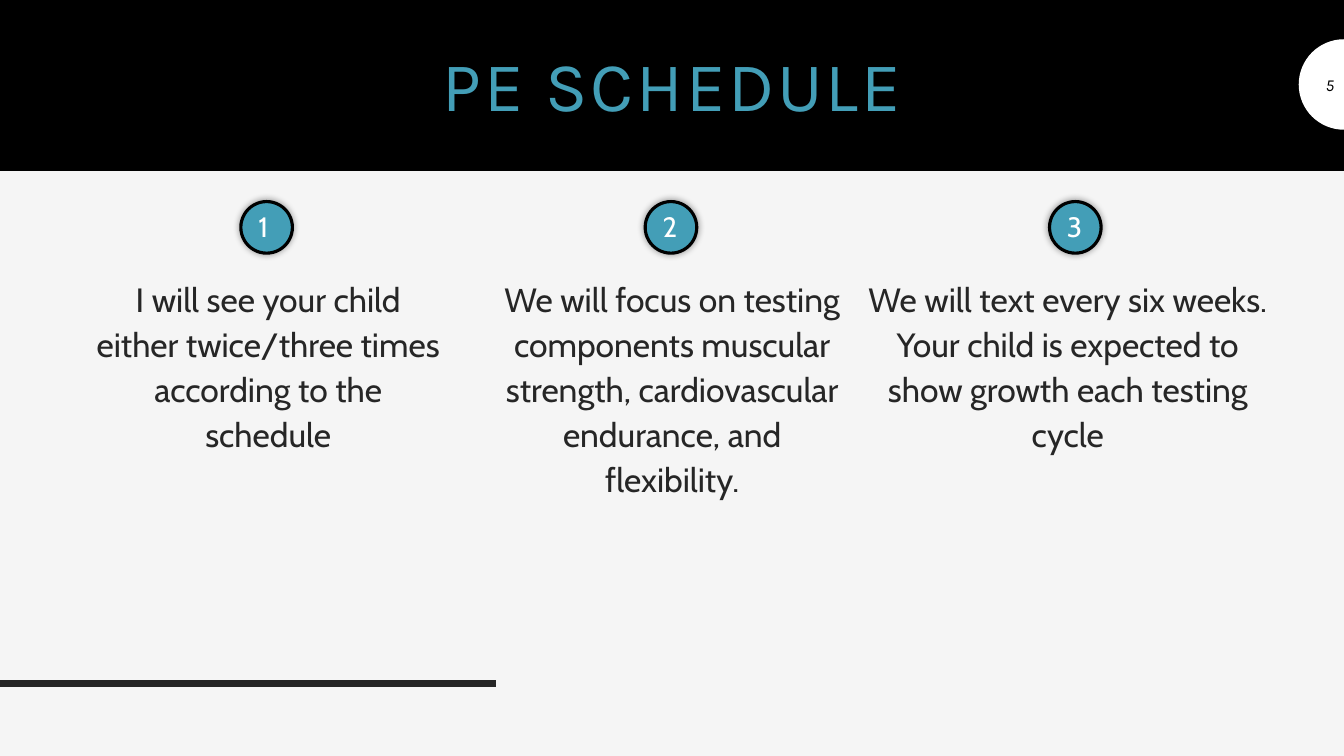
from math import cos, pi, sin

from lxml.etree import SubElement
from pptx import Presentation
from pptx.dml.color import RGBColor as Rgb
from pptx.enum.shapes import MSO_CONNECTOR as Link, MSO_SHAPE as Kind
from pptx.enum.text import MSO_ANCHOR as Anchor, PP_ALIGN as Align
from pptx.oxml.ns import qn
from pptx.util import Cm, Pt

HUES = {"paper": "F5F5F5", "band": "000000", "teal": "439EB7",
        "ink": "262626", "white": "FFFFFF"}
WIDE, HIGH = 33.87, 19.05

# Steps: text, left and width of the text box
STEPS = [
    ("I will see your child either twice/three times according to the "
     "schedule", 2.11, 9.3),
    ("We will focus on testing components muscular strength, "
     "cardiovascular endurance, and flexibility.", 12.29, 9.3),
    ("We will text every six weeks. Your child is expected to show growth "
     "each testing cycle", 21.36, 11.1),
]


def hue(name):
    return Rgb.from_string(HUES[name])


def paint(shape, fill, line=None, width=1):
    shape.shadow.inherit = False
    shape.fill.solid()
    shape.fill.fore_color.rgb = hue(fill)
    if line:
        shape.line.color.rgb = hue(line)
        shape.line.width = Pt(width)
    else:
        shape.line.fill.background()


def write(slide, box, text, font, size, tint, align=Align.CENTER,
          anchor=Anchor.TOP, lead=1.0, slant=False, track=0):
    frame = slide.shapes.add_textbox(*(Cm(n) for n in box)).text_frame
    frame.word_wrap = True
    frame.vertical_anchor = anchor
    para = frame.paragraphs[0]
    para.alignment = align
    para.line_spacing = lead
    run = para.add_run()
    run.text = text
    run.font.name = font
    run.font.size = Pt(size)
    run.font.color.rgb = hue(tint)
    if slant:
        run.font.italic = True
    if track:
        run.font._element.set("spc", str(track))


def glow(shape):
    """Give the shape a soft, centred shadow."""
    fx = shape._element.spPr.find(qn("a:effectLst"))
    soft = SubElement(fx, qn("a:outerShdw"), blurRad=str(Pt(5)), dist="0",
                      dir="0", algn="ctr", rotWithShape="0")
    tone = SubElement(soft, qn("a:srgbClr"), val=HUES["band"])
    SubElement(tone, qn("a:alpha"), val="40000")


def header(slide, left, top, width, height):
    band = slide.shapes.add_shape(Kind.RECTANGLE, Cm(left), Cm(top),
                                  Cm(width), Cm(height))
    paint(band, "band", "band")
    write(slide, (left + 2.11, top + 0.84, width - 4.22, 2.79), "PE SCHEDULE",
          "Karla", 50, "teal", anchor=Anchor.MIDDLE, lead=0.9, track=200)


def badge(slide, right, mid, radius, number):
    """Half disc on the right edge with the page number."""
    turns = [pi / 2 + pi * i / 32 for i in range(33)]
    dots = [(Cm(right + radius * cos(t)), Cm(mid - radius * sin(t)))
            for t in turns]
    path = slide.shapes.build_freeform(*dots[0])
    path.add_line_segments(dots[1:], close=True)
    paint(path.convert_to_shape(), "white")
    write(slide, (right - radius, mid - 0.51, radius, 1.02), number, "Karla",
          12, "band", Align.RIGHT, Anchor.MIDDLE, slant=True)


def step(slide, mark, top, number, text, left, width):
    """Numbered disc at mark, with its text box below."""
    disc = slide.shapes.add_shape(Kind.OVAL, Cm(mark), Cm(top),
                                  Cm(1.3), Cm(1.3))
    paint(disc, "teal", "band", 2.25)
    glow(disc)
    write(slide, (mark + 0.19, top + 0.08, 0.92, 1.11), number, "Cabin", 20,
          "white", Align.LEFT)
    write(slide, (left, top + 1.7, width, 6.38), text, "Cabin", 24, "ink",
          lead=1.12)


def rule(slide, left, top, width):
    bar = slide.shapes.add_connector(Link.STRAIGHT, Cm(left), Cm(top),
                                     Cm(left + width), Cm(top))
    bar.line.color.rgb = hue("ink")
    bar.line.width = Pt(4.5)
    SubElement(bar._element.spPr, qn("a:effectLst"))


def main():
    deck = Presentation()
    deck.slide_width, deck.slide_height = Cm(WIDE), Cm(HIGH)
    slide = deck.slides.add_slide(deck.slide_layouts[6])
    back = slide.background.fill
    back.solid()
    back.fore_color.rgb = hue("paper")

    rule(slide, 0, 17.22, 12.5)
    header(slide, 0, 0, WIDE, 4.29)
    badge(slide, WIDE, 2.13, 1.14, "5")
    for i, (text, left, width) in enumerate(STEPS):
        step(slide, 6.07 + 10.19 * i, 5.08, str(i + 1), text, left, width)
    deck.save("out.pptx")


if __name__ == "__main__":
    main()
